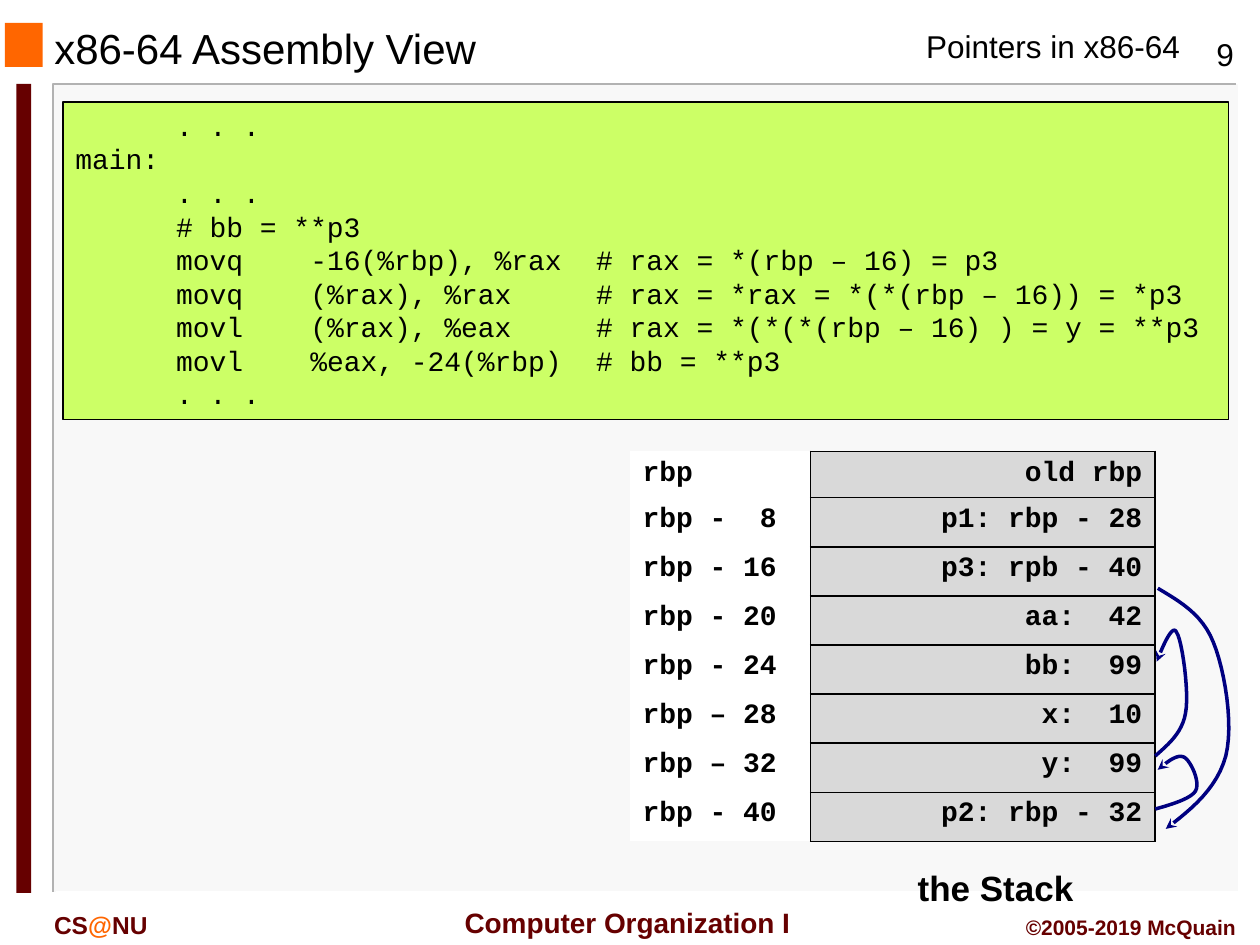
from dataclasses import dataclass

from lxml import etree
from pptx import Presentation
from pptx.dml.color import RGBColor
from pptx.enum import shapes, text
from pptx.oxml import ns
from pptx.util import Cm, Pt

COLORS = {
    "black": "000000", "white": "FFFFFF", "panel": "F8F8F8", "rule": "B2B2B2",
    "orange": "FF6600", "maroon": "660000", "code": "CCFF66",
    "cell": "D9D9D9", "navy": "000080",
}
LEFT, CENTER, RIGHT = text.PP_ALIGN.LEFT, text.PP_ALIGN.CENTER, text.PP_ALIGN.RIGHT
CURVE_STEPS = 12


@dataclass
class Block:
    box: tuple
    color: str


@dataclass
class Label:
    box: tuple
    runs: list  # (words, colour name)
    size: int
    bold: bool = False
    align: int = LEFT


@dataclass
class Pointer:
    """Start point, then two Bezier segments of three points each, in cm."""
    points: list


def rgb(name: str) -> RGBColor:
    return RGBColor.from_string(COLORS[name])


def add_run(paragraph, words: str, size: int, color="black", font="Arial", bold=False) -> None:
    run = paragraph.add_run()
    run.text = words
    for key, value in {"name": font, "size": Pt(size), "bold": bold}.items():
        setattr(run.font, key, value)
    run.font.color.rgb = rgb(color)


def draw_block(slide, block: Block):
    shape = slide.shapes.add_shape(shapes.MSO_SHAPE.RECTANGLE, *map(Cm, block.box))
    shape.shadow.inherit = False
    shape.fill.solid()
    shape.fill.fore_color.rgb = rgb(block.color)
    shape.line.fill.background()
    return shape


def draw_label(slide, label: Label) -> None:
    frame = slide.shapes.add_textbox(*map(Cm, label.box)).text_frame
    frame.word_wrap = True
    frame.paragraphs[0].alignment = label.align
    for words, color in label.runs:
        add_run(frame.paragraphs[0], words, label.size, color, bold=label.bold)


def draw_path(slide, points: list, color: str, width: float):
    start, *rest = [(Cm(x), Cm(y)) for x, y in points]
    builder = slide.shapes.build_freeform(*start)
    builder.add_line_segments(rest, close=False)
    path = builder.convert_to_shape()
    path.shadow.inherit = False
    path.fill.background()
    path.line.color.rgb = rgb(color)
    path.line.width = Pt(width)
    return path


def bezier(p0, p1, p2, p3) -> list:
    curve = []
    for step in range(1, CURVE_STEPS + 1):
        t = step / CURVE_STEPS
        weights = ((1 - t) ** 3, 3 * t * (1 - t) ** 2, 3 * t * t * (1 - t), t ** 3)
        curve.append(tuple(sum(w * p[axis] for w, p in zip(weights, (p0, p1, p2, p3)))
                           for axis in (0, 1)))
    return curve


def draw_pointer(slide, pointer: Pointer) -> None:
    points = pointer.points
    curve = points[:1] + bezier(*points[:4]) + bezier(*points[3:])
    arrow = draw_path(slide, curve, "navy", 2)
    etree.SubElement(arrow.line._get_or_add_ln(), ns.qn("a:tailEnd"), type="stealth")


def set_tabs(paragraph, stops: list) -> None:
    tabs = etree.SubElement(paragraph._p.get_or_add_pPr(), ns.qn("a:tabLst"))
    for stop in stops:
        etree.SubElement(tabs, ns.qn("a:tab"), pos=str(Cm(stop)), algn="l")


def set_borders(cell, edges: str) -> None:
    properties = cell._tc.get_or_add_tcPr()
    for edge in "LRTB":
        line = etree.SubElement(properties, ns.qn(f"a:ln{edge}"), w=str(Pt(1)))
        if edge in edges:
            fill = etree.SubElement(line, ns.qn("a:solidFill"))
            etree.SubElement(fill, ns.qn("a:srgbClr"), val=COLORS["black"])
        else:
            etree.SubElement(line, ns.qn("a:noFill"))


def draw_stack(slide, rows: list) -> None:
    table = slide.shapes.add_table(len(rows), 2, Cm(12.7), Cm(9.1), Cm(10.58), Cm(7.86)).table
    table.first_row = table.horz_banding = False
    for column, width in zip(table.columns, (3.64, 6.94)):
        column.width = Cm(width)
    styles = (("R", "white", LEFT), ("LRTB", "cell", RIGHT))
    for index, row in enumerate(rows):
        table.rows[index].height = Cm(0.99 if index else 0.93)
        for column, (words, (edges, fill, align)) in enumerate(zip(row, styles)):
            cell = table.cell(index, column)
            set_borders(cell, edges)
            cell.fill.solid()
            cell.fill.fore_color.rgb = rgb(fill)
            paragraph = cell.text_frame.paragraphs[0]
            paragraph.alignment = align
            add_run(paragraph, words, 16, font="Courier New", bold=True)


def draw_code(slide, lines: list) -> None:
    listing = draw_block(slide, Block((1.27, 2.06, 23.5, 6.4), "code"))
    listing.line.color.rgb = rgb("black")
    listing.line.width = Pt(0.75)
    frame = listing.text_frame
    frame.word_wrap = True
    frame.vertical_anchor = text.MSO_ANCHOR.TOP
    for index, line in enumerate(lines):
        paragraph = frame.add_paragraph() if index else frame.paragraphs[0]
        paragraph.alignment = LEFT
        set_tabs(paragraph, [2.03, 4.74, 10.5])  # instruction, operands, comment
        add_run(paragraph, line, 16, font="Courier New")


BLOCKS = [
    Block((1.09, 1.7, 23.88, 16.28), "panel"),
    Block((0.1, 0.46, 0.76, 0.89), "orange"),
    Block((0.33, 1.69, 0.3, 16.31), "maroon"),
]
LABELS = [
    Label((18.42, 0.43, 5.9, 1.02), [("Pointers in x86-64", "black")], 18),
    Label((23.85, 0.58, 1.7, 1.02), [("9", "black")], 18, align=CENTER),
    Label((8.5, 18.14, 8.3, 0.94), [("Computer Organization I", "maroon")], 16, True, CENTER),
    Label((0.84, 18.22, 3.81, 0.84),
          [("CS", "maroon"), ("@", "orange"), ("NU", "maroon")], 14, True),
    Label((19.89, 18.31, 5.28, 0.76), [("©2005-2019 McQuain", "maroon")], 12, True, RIGHT),
    Label((17.58, 17.35, 4.98, 1.12), [("the Stack", "black")], 20, True, CENTER),
]
CODE = [
    "\t. . .",
    "main:",
    "\t. . .",
    "\t# bb = **p3",
    "\tmovq\t-16(%rbp), %rax\t# rax = *(rbp – 16) = p3",
    "\tmovq\t(%rax), %rax\t# rax = *rax = *(*(rbp – 16)) = *p3",
    "\tmovl\t(%rax), %eax\t# rax = *(*(*(rbp – 16) ) = y = **p3",
    "\tmovl\t%eax, -24(%rbp)\t# bb = **p3",
    "\t. . .",
]
STACK = [
    ("rbp", "old rbp"), ("rbp -  8", "p1: rbp - 28"), ("rbp - 16", "p3: rpb - 40"),
    ("rbp - 20", "aa:  42"), ("rbp - 24", "bb:  99"), ("rbp – 28", "x:  10"),
    ("rbp – 32", "y:  99"), ("rbp - 40", "p2: rbp - 32"),
]
POINTERS = [
    Pointer([(23.34, 11.86), (23.77, 12.12), (24.23, 12.37), (24.46, 12.95)]
            + [(24.69, 13.51), (24.87, 14.61), (24.71, 15.24)]
            + [(24.54, 15.88), (24.03, 16.31), (23.5, 16.71)]),
    Pointer([(23.29, 16.31), (23.65, 16.21), (24, 16.1), (24.1, 15.95)]
            + [(24.21, 15.77), (24, 15.34), (23.88, 15.27)]
            + [(23.75, 15.19), (23.55, 15.34), (23.34, 15.52)]),
    Pointer([(23.29, 15.24), (23.55, 15.01), (23.83, 14.78), (23.9, 14.38)]
            + [(23.98, 13.97), (23.83, 12.9), (23.72, 12.75)]
            + [(23.65, 12.57), (23.47, 12.95), (23.32, 13.34)]),
]


def draw_pointer_chain(slide, pointer: Pointer) -> None:
    points = pointer.points
    curve = points[:1]
    for first in range(0, len(points) - 1, 3):
        curve = curve + bezier(*points[first:first + 4])
    arrow = draw_path(slide, curve, "navy", 2)
    etree.SubElement(arrow.line._get_or_add_ln(), ns.qn("a:tailEnd"), type="stealth")


def main() -> None:
    deck = Presentation()
    deck.slide_width, deck.slide_height = Cm(25.4), Cm(19.05)
    slide = deck.slides.add_slide(deck.slide_layouts[5])

    # Title
    title = slide.shapes.title
    box = dict(zip(("left", "top", "width", "height"), map(Cm, (0.84, 0.48, 16.08, 0.97))))
    for key, value in box.items():
        setattr(title, key, value)
    title.text_frame.vertical_anchor = text.MSO_ANCHOR.MIDDLE
    title.text_frame.paragraphs[0].alignment = LEFT
    add_run(title.text_frame.paragraphs[0], "x86-64 Assembly View", 24)

    # Frame and labels
    for block in BLOCKS:
        draw_block(slide, block)
    draw_path(slide, [(24.92, 1.7), (1.07, 1.7), (1.07, 17.98)], "rule", 1)
    draw_path(slide, [(24.97, 1.7), (24.97, 17.98), (1.12, 17.98)], "white", 1)
    for label in LABELS:
        draw_label(slide, label)

    # Code, stack and pointers
    draw_code(slide, CODE)
    draw_stack(slide, STACK)
    for pointer in POINTERS:
        draw_pointer_chain(slide, pointer)

    deck.save("out.pptx")


if __name__ == "__main__":
    main()
